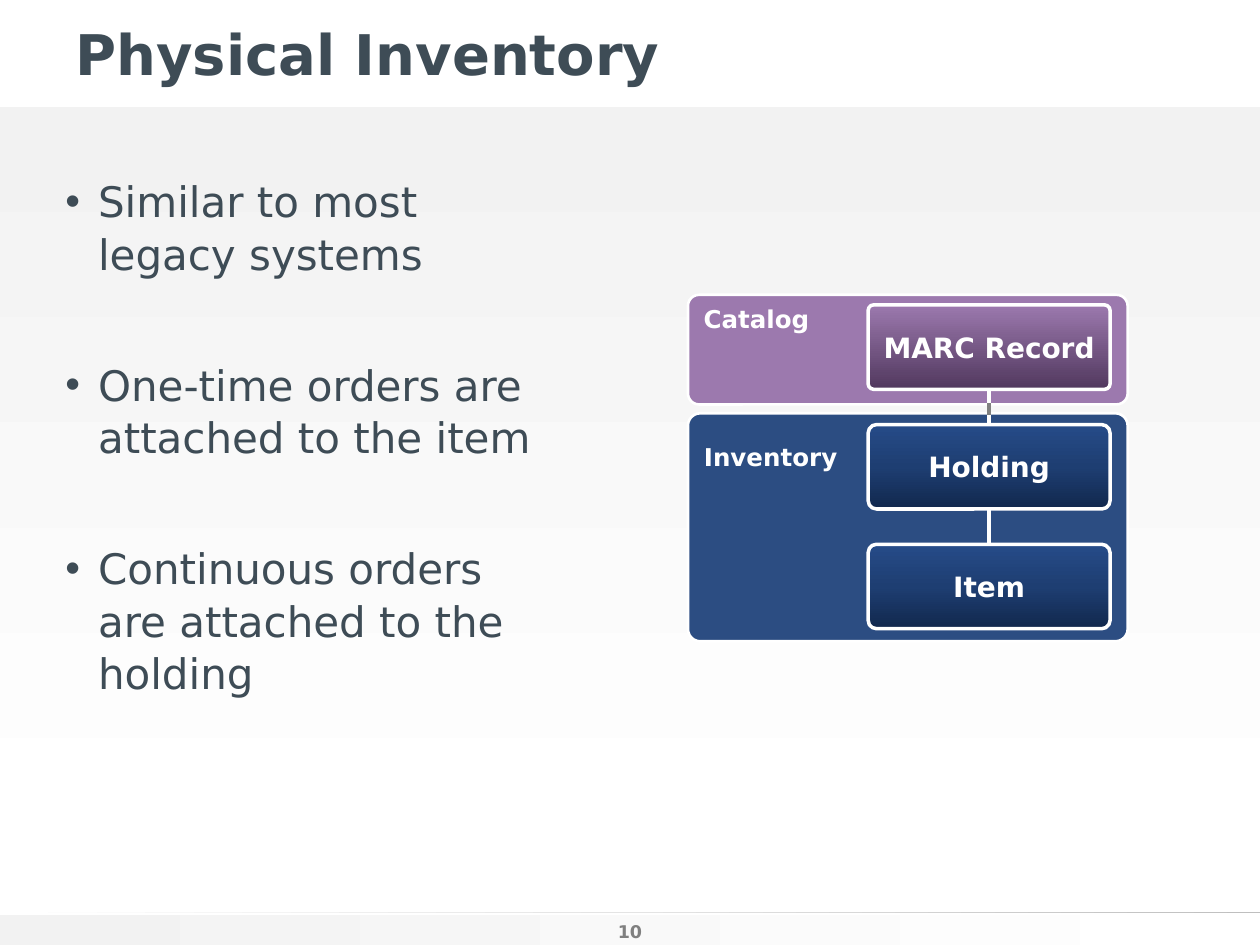
"""Build the Physical Inventory slide: three bullets beside a record hierarchy."""
from lxml import etree
from pptx import Presentation
from pptx.dml.color import RGBColor
from pptx.enum.shapes import MSO_CONNECTOR, MSO_SHAPE
from pptx.enum.text import MSO_ANCHOR, PP_ALIGN
from pptx.oxml.ns import qn
from pptx.util import Inches, Pt

RECT, ROUND = MSO_SHAPE.RECTANGLE, MSO_SHAPE.ROUNDED_RECTANGLE
STRAIGHT = MSO_CONNECTOR.STRAIGHT
TOP, MIDDLE, BOTTOM = MSO_ANCHOR.TOP, MSO_ANCHOR.MIDDLE, MSO_ANCHOR.BOTTOM
LEFT, CENTER = PP_ALIGN.LEFT, PP_ALIGN.CENTER

FONT = "DejaVu Sans"
WHITE = RGBColor(0xFF, 0xFF, 0xFF)
PALE = RGBColor(0xF2, 0xF2, 0xF2)
SILVER = RGBColor(0xBF, 0xBF, 0xBF)
MIST = RGBColor(0xE4, 0xE4, 0xE4)
GRAY = RGBColor(0x80, 0x80, 0x80)
SLATE = RGBColor(0x3E, 0x4C, 0x56)
BLUE = RGBColor(0x2C, 0x4D, 0x82)
PURPLE = RGBColor(0x9C, 0x79, 0xAE)
PURPLE_STOPS = [(0, RGBColor(0x51, 0x38, 0x5E)), (100, PURPLE)]
BLUE_STOPS = [(0, RGBColor(0x11, 0x28, 0x4D)), (50, RGBColor(0x1E, 0x3E, 0x72)),
              (100, RGBColor(0x26, 0x4B, 0x88))]
FADE_STOPS = [(0, PALE), (100, WHITE)]
RULE_STOPS = [(0, SILVER), (50, MIST), (100, WHITE)]

TITLE = "Physical Inventory"
PAGE = "10"
BULLETS = [
    "Similar to most legacy systems",
    "One-time orders are attached to the item",
    "Continuous orders are attached to the holding",
]
BANDS = [
    ((0, 7.26, 10, 0.24), FADE_STOPS, 0),
    ((0, 0.85, 10, 5.84), FADE_STOPS, 90),
    ((0, 7.24, 10, 0.01), RULE_STOPS, 180),
]
GROUPS = [
    ("Inventory", 3.28, 1.81, 0.054, BLUE, 0.2),
    ("Catalog", 2.34, 0.87, 0.101, PURPLE, 0.05),
]
RECORDS = [
    ("MARC Record", 0.065, PURPLE_STOPS),
    ("Holding", 0.099, BLUE_STOPS),
    ("Item", 0.099, BLUE_STOPS),
]
GROUP_X, GROUP_W = 5.46, 3.49
RECORD_X, RECORD_Y, RECORD_W, RECORD_H, RECORD_STEP = 6.89, 2.42, 1.92, 0.67, 0.95
LINK_X = RECORD_X + RECORD_W / 2


def set_gradient(sp, stops, angle):
    sp.fill.gradient()
    grad = sp._element.spPr.find(qn("a:gradFill"))
    for child in list(grad):
        grad.remove(child)
    gs_list = etree.SubElement(grad, qn("a:gsLst"))
    for pos, color in stops:
        gs = etree.SubElement(gs_list, qn("a:gs"), pos=str(pos * 1000))
        etree.SubElement(gs, qn("a:srgbClr"), val=str(color))
    etree.SubElement(grad, qn("a:lin"), ang=str(angle * 60000), scaled="0")


def add_box(slide, kind, box, line=None):
    sp = slide.shapes.add_shape(kind, *map(Inches, box))
    sp.shadow.inherit = False
    if line:
        sp.line.color.rgb = WHITE
        sp.line.width = Pt(line)
    else:
        sp.line.fill.background()
    return sp


def set_text(sp, text, size, color=WHITE, bold=True, align=LEFT, anchor=TOP):
    tf = sp.text_frame
    tf.word_wrap = True
    tf.vertical_anchor = anchor
    tf.text = text
    for p in tf.paragraphs:
        p.alignment = align
        for r in p.runs:
            r.font.name = FONT
            r.font.size = Pt(size)
            r.font.bold = bold
            r.font.color.rgb = color
    return tf


def add_text(slide, box, *args, **style):
    sp = slide.shapes.add_textbox(*map(Inches, box))
    return set_text(sp, *args, **style)


def add_link(slide, y1, y2, color):
    line = slide.shapes.add_connector(
        STRAIGHT, Inches(LINK_X), Inches(y1), Inches(LINK_X), Inches(y2))
    line.line.color.rgb = color
    line.line.width = Pt(2)
    etree.SubElement(line._element.spPr, qn("a:effectLst"))
    return line


def add_bullets(slide):
    tf = add_text(slide, (0.42, 1.33, 4.08, 5.69), "\n".join(BULLETS), 24, SLATE, bold=False)
    for i, p in enumerate(tf.paragraphs):
        p.line_spacing = 1.04
        p.space_before = Pt(45 if i else 0)
        pPr = p._p.get_or_add_pPr()
        pPr.set("marL", str(Inches(0.26)))
        pPr.set("indent", str(-Inches(0.26)))
        etree.SubElement(pPr, qn("a:buFont"), typeface="Arial")
        etree.SubElement(pPr, qn("a:buChar"), char="•")


def add_hierarchy(slide):
    for label, y, h, adj, color, inset in GROUPS:
        sp = add_box(slide, ROUND, (GROUP_X, y, GROUP_W, h), 1.5)
        sp.adjustments[0] = adj
        sp.fill.solid()
        sp.fill.fore_color.rgb = color
        set_text(sp, label, 14).margin_top = Inches(inset)

    records = []
    for i, (label, adj, stops) in enumerate(RECORDS):
        y = RECORD_Y + i * RECORD_STEP
        sp = add_box(slide, ROUND, (RECORD_X, y, RECORD_W, RECORD_H), 2)
        sp.adjustments[0] = adj
        set_gradient(sp, stops, 270)
        set_text(sp, label, 16, align=CENTER, anchor=MIDDLE).word_wrap = False
        records.append(sp)

    for i, (upper, lower) in enumerate(zip(records, records[1:])):
        y = RECORD_Y + i * RECORD_STEP
        line = add_link(slide, y + RECORD_H, y + RECORD_STEP, WHITE)
        line.begin_connect(upper, 2)
        line.end_connect(lower, 0)
    add_link(slide, 3.2, 3.29, GRAY)


def main():
    prs = Presentation()
    prs.slide_width, prs.slide_height = Inches(10), Inches(7.5)
    slide = prs.slides.add_slide(prs.slide_layouts[6])
    for box, stops, angle in BANDS:
        set_gradient(add_box(slide, RECT, box), stops, angle)
    add_text(slide, (4.68, 7.03, 0.64, 0.5), PAGE, 10, GRAY, align=CENTER, anchor=BOTTOM)
    add_text(slide, (0.5, 0.13, 9, 0.58), TITLE, 32, SLATE, anchor=MIDDLE)
    add_hierarchy(slide)
    add_bullets(slide)
    prs.save("out.pptx")


if __name__ == "__main__":
    main()
